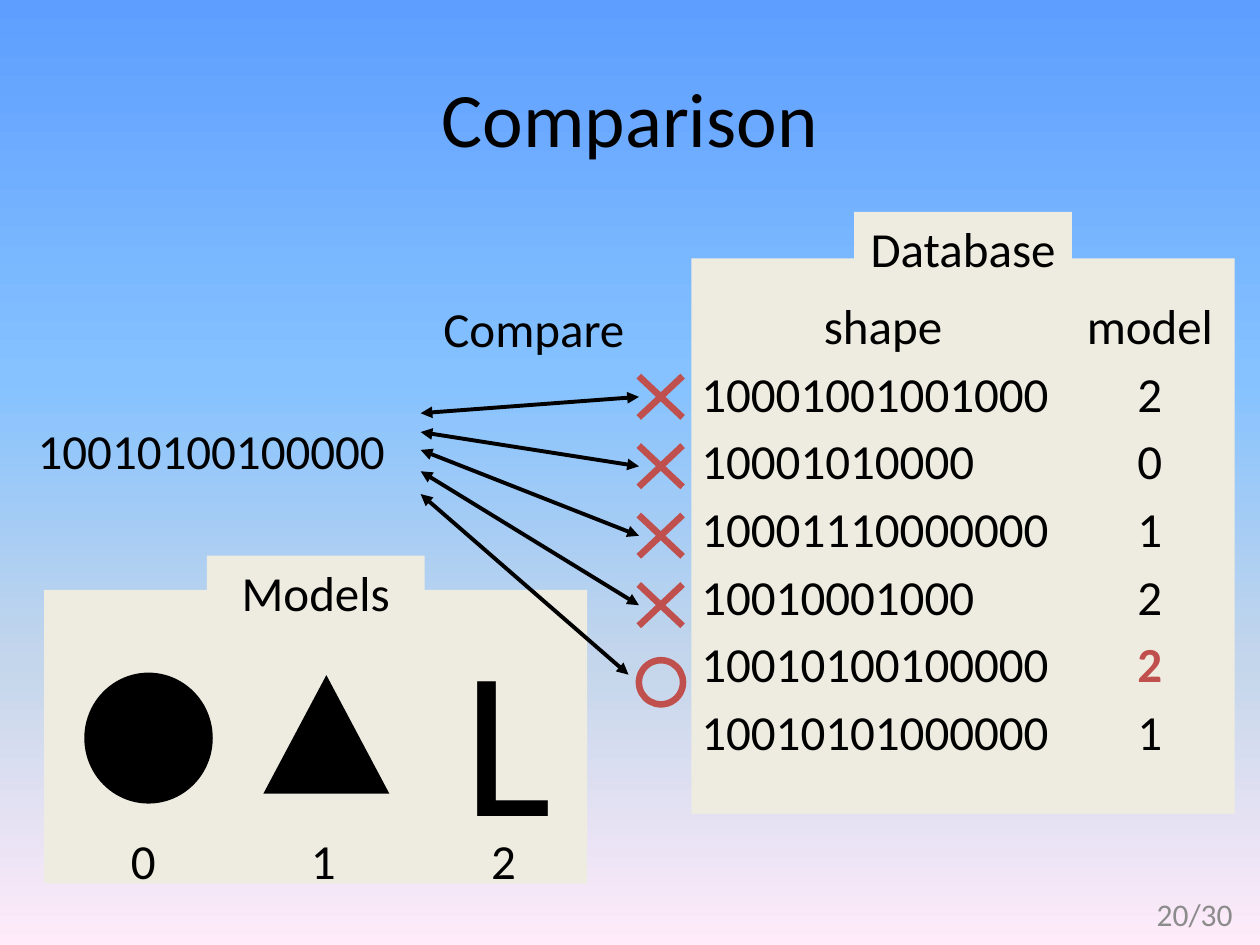
from lxml.etree import SubElement
from pptx import Presentation
from pptx.dml.color import RGBColor
from pptx.enum.shapes import MSO_CONNECTOR as Connector, MSO_SHAPE as Shape
from pptx.enum.text import MSO_ANCHOR as Anchor, PP_ALIGN as Align
from pptx.oxml.ns import qn
from pptx.util import Cm, Pt

COLORS = {"ink": "000000", "panel": "EEECE1", "mark": "C0504D", "page": "8C8C8C"}
SKY = [(0, "5E9EFF"), (40, "85C2FF"), (70, "C4D6EB"), (100, "FFEBFA")]


class SlideBuilder:
    font = "Calibri"
    size = 28

    def __init__(self, slide):
        self.slide = slide

    def color(self, name):
        return RGBColor.from_string(COLORS[name])

    def background(self, stops):
        fill = self.slide.background.fill
        fill.gradient()
        fill.gradient_angle = 270
        stop_list = next(self.slide.element.iter(qn("a:gsLst")))
        for old_stop in list(stop_list):
            stop_list.remove(old_stop)
        for percent, value in stops:
            stop = SubElement(stop_list, qn("a:gs"), pos=str(percent * 1000))
            SubElement(stop, qn("a:srgbClr"), val=value)

    def run(self, paragraph, text, size=None, color="ink", bold=False):
        run = paragraph.add_run()
        run.text = text
        run.font.name = self.font
        run.font.size = Pt(size or self.size)
        run.font.bold = bold
        run.font.color.rgb = self.color(color)

    def tabs(self, paragraph, stops):
        tab_list = SubElement(paragraph._p.get_or_add_pPr(), qn("a:tabLst"))
        for stop in stops:
            SubElement(tab_list, qn("a:tab"), pos=str(Cm(stop)), algn="ctr")

    def title(self, text, left, top, width, height):
        title = self.slide.shapes.title
        title.left, title.top = Cm(left), Cm(top)
        title.width, title.height = Cm(width), Cm(height)
        title.text_frame.vertical_anchor = Anchor.MIDDLE
        paragraph = title.text_frame.paragraphs[0]
        paragraph.alignment = Align.CENTER
        self.run(paragraph, text, size=44)

    def frame(self, left, top, width, height):
        box = self.slide.shapes.add_textbox(Cm(left), Cm(top), Cm(width), Cm(height))
        box.text_frame.word_wrap = True
        return box.text_frame

    def text(self, text, left, top, width, height, align=Align.LEFT, tabs=(), **style):
        frame = self.frame(left, top, width, height)
        paragraph = frame.paragraphs[0]
        paragraph.alignment = align
        if tabs:
            self.tabs(paragraph, tabs)
        self.run(paragraph, text, **style)
        return frame

    def shape(self, kind, left, top, width, height, fill=None, line=None):
        shape = self.slide.shapes.add_shape(kind, Cm(left), Cm(top), Cm(width), Cm(height))
        shape.shadow.inherit = False
        if fill:
            shape.fill.solid()
            shape.fill.fore_color.rgb = self.color(fill)
        else:
            shape.fill.background()
        if line:
            shape.line.color.rgb = self.color(line)
            shape.line.width = Pt(3.75)
        else:
            shape.line.fill.background()
        return shape

    def label(self, text, left, top):
        plate = self.shape(Shape.RECTANGLE, left, top, 4.39, 1.45, "panel")
        paragraph = plate.text_frame.paragraphs[0]
        paragraph.alignment = Align.CENTER
        self.run(paragraph, text)

    def arrow(self, x1, y1, x2, y2):
        arrow = self.slide.shapes.add_connector(
            Connector.STRAIGHT, Cm(x1), Cm(y1), Cm(x2), Cm(y2))
        arrow.line.color.rgb = self.color("ink")
        arrow.line.width = Pt(2.25)
        line = arrow.line._get_or_add_ln()
        for end in ("a:headEnd", "a:tailEnd"):
            SubElement(line, qn(end), type="triangle")
        SubElement(arrow._element.spPr, qn("a:effectLst"))


def main():
    deck = Presentation()
    deck.slide_width, deck.slide_height = Cm(25.4), Cm(19.05)
    page = SlideBuilder(deck.slides.add_slide(deck.slide_layouts[5]))
    page.background(SKY)

    # Panels and title
    page.shape(Shape.RECTANGLE, 0.89, 11.89, 10.95, 5.92, "panel")
    page.shape(Shape.RECTANGLE, 13.94, 5.21, 10.95, 11.2, "panel")
    page.title("Comparison", 1.27, 0.76, 22.86, 3.18)

    # Database rows: shape code, model number
    rows = [("10001001001000", "2"), ("10001010000", "0"), ("10001110000000", "1"),
            ("10010001000", "2"), ("10010100100000", "2"), ("10010101000000", "1")]
    match = 4
    shape_tab, model_tab = 3.66, 9.04
    database = page.frame(13.89, 5.84, 11, 11.38)
    header = database.paragraphs[0]
    header.space_after = Pt(5)
    page.tabs(header, [shape_tab, model_tab])
    page.run(header, "\tshape\tmodel")
    for index, (code, model) in enumerate(rows):
        row = database.add_paragraph()
        row.space_after = Pt(5)
        page.tabs(row, [model_tab])
        page.run(row, code + "\t")
        found = index == match
        page.run(row, model, color="mark" if found else "ink", bold=found)
    page.label("Database", 17.22, 4.27)

    # Query code
    page.text("10010100100000", 0.51, 8.36, 8.38, 1.45)
    page.text("Compare", 8.69, 5.89, 5, 1.45)

    # Comparisons: an arrow to each row, a cross until the match
    for index, start in enumerate([8.33, 8.71, 9.07, 9.5, 9.96]):
        row_y = 8 + 1.4 * index
        if index == match:
            page.arrow(8.48, start, 12.67, row_y)
            page.shape(Shape.OVAL, 12.88, 13.31, 0.89, 0.89, line="mark")
        else:
            page.arrow(8.48, start, 12.88, row_y)
            cross = page.shape(Shape.MATH_MULTIPLY, 12.47, row_y - 0.8, 1.7, 1.6, "mark")
            cross.adjustments[0] = 0.083

    # Models
    page.text("\t0\t1\t2", 0.84, 16.61, 11, 1.52, tabs=[1.8, 5.43, 9.06])
    page.label("Models", 4.17, 11.2)
    page.shape(Shape.OVAL, 1.7, 13.56, 2.59, 2.64, "ink")
    page.shape(Shape.ISOSCELES_TRIANGLE, 5.31, 13.61, 2.54, 2.39, "ink")
    letter = page.text("L", 8.76, 12.22, 2.95, 5.13, Align.CENTER, size=120)
    letter.margin_left = letter.margin_right = 0
    letter.margin_top = letter.margin_bottom = 0

    # Page number
    number = page.text("20/30", 19.18, 17.91, 5.92, 1.02, Align.RIGHT, size=18, color="page")
    number.vertical_anchor = Anchor.MIDDLE

    deck.save("out.pptx")


if __name__ == "__main__":
    main()
